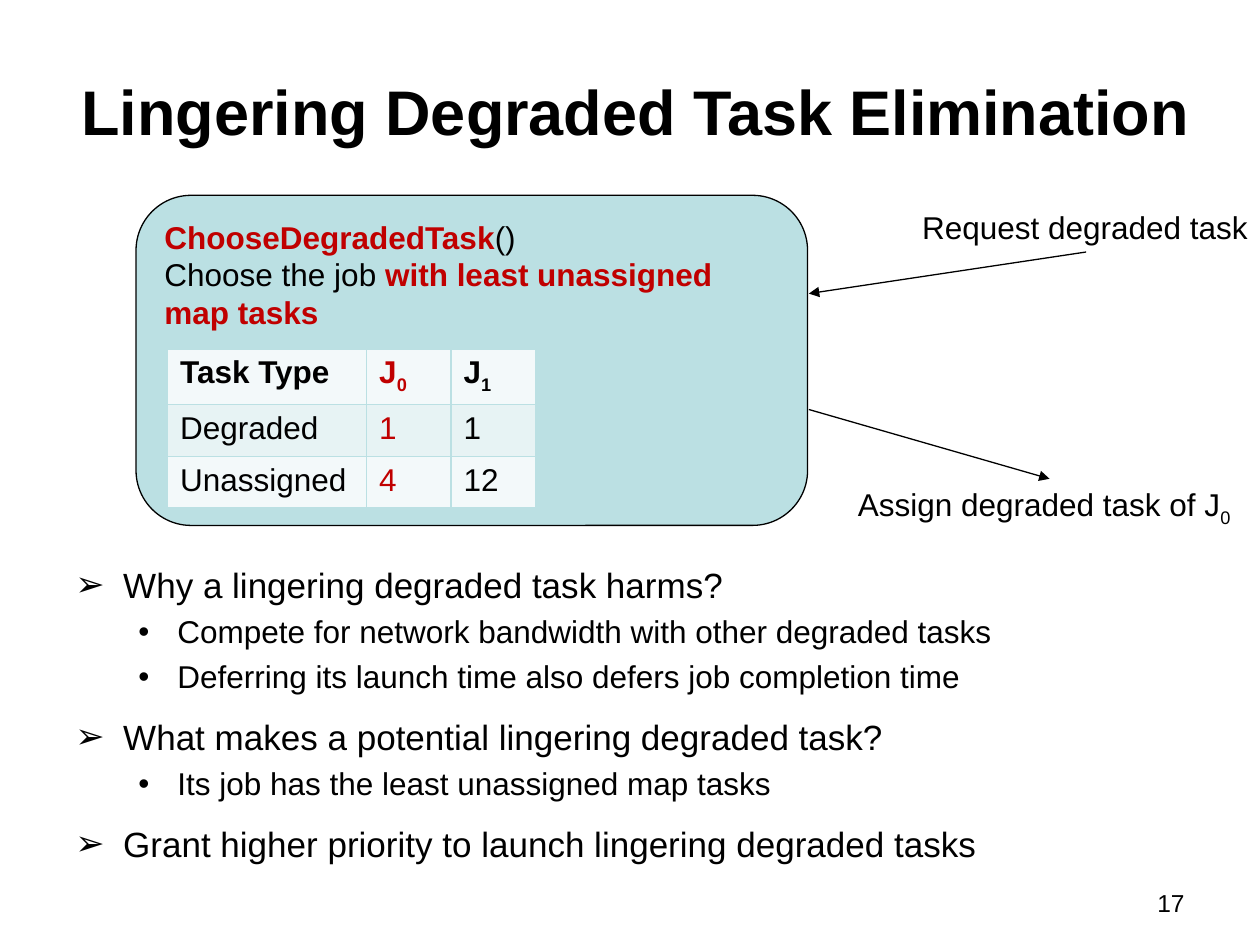
"""Build the slide on eliminating lingering degraded tasks."""
from lxml.etree import SubElement
from pptx import Presentation
from pptx.dml.color import RGBColor
from pptx.enum.shapes import MSO_CONNECTOR, MSO_SHAPE
from pptx.enum.text import MSO_ANCHOR as Anchor, PP_ALIGN as Align
from pptx.oxml.ns import qn
from pptx.util import Inches, Pt

FONT = "Arial"
BLACK = RGBColor(0x00, 0x00, 0x00)
RED = RGBColor(0xC0, 0x00, 0x00)
TEAL = RGBColor(0xBB, 0xE0, 0xE3)
ROW_FILLS = [RGBColor(0xF3, 0xF9, 0xFA), RGBColor(0xE7, 0xF3, 0xF4)]

# A run is (text, flags), with flags b = bold, r = red, s = subscript.
TITLE = [("Lingering Degraded Task Elimination", "b")]
PAGE_NUMBER = [("17", "")]
ALGORITHM = [
    [("ChooseDegradedTask", "rb"), ("()", "")],
    [("Choose the job ", ""), ("with least unassigned map tasks", "rb")],
]
TASKS = [
    [[("Task Type", "b")], [("J", "rb"), ("0", "rbs")], [("J", "b"), ("1", "bs")]],
    [[("Degraded", "")], [("1", "r")], [("1", "")]],
    [[("Unassigned", "")], [("4", "r")], [("12", "")]],
]
COLUMN_WIDTHS = [1.58, 0.67, 0.67]
ROW_HEIGHT = 0.41
LABELS = [
    ((7.22, 1.6, 2.81, 0.4), [("Request degraded task", "")]),
    ((6.71, 3.8, 3.25, 0.4), [("Assign degraded task of J", ""), ("0", "s")]),
]
ARROWS = [((8.62, 2), (6.42, 2.33)), ((6.42, 3.25), (8.33, 3.8))]
POINTS = [
    (0, "Why a lingering degraded task harms?"),
    (1, "Compete for network bandwidth with other degraded tasks"),
    (1, "Deferring its launch time also defers job completion time"),
    (0, "What makes a potential lingering degraded task?"),
    (1, "Its job has the least unassigned map tasks"),
    (0, "Grant higher priority to launch lingering degraded tasks"),
]
LEVELS = [
    {"bullet": "➢", "size": 20, "margin": 0.38, "hanging": 0.38, "before": 11.5},
    {"bullet": "•", "size": 18, "margin": 0.81, "hanging": 0.31, "before": 4.1},
]


def inches(values):
    return [Inches(value) for value in values]


def write(para, runs, size=18, align=Align.LEFT):
    para.alignment = align
    for text, flags in runs:
        span = para.add_run()
        span.text = text
        font = span.font
        font.name, font.size, font.bold = FONT, Pt(size), "b" in flags
        font.color.rgb = RED if "r" in flags else BLACK
        if "s" in flags:
            font._element.set("baseline", "-25000")


def fill_frame(frame, paragraphs, **style):
    for index, runs in enumerate(paragraphs):
        para = frame.add_paragraph() if index else frame.paragraphs[0]
        write(para, runs, **style)


def add_text(page, place, paragraphs, wrap=True, anchor=Anchor.TOP, **style):
    box = page.shapes.add_textbox(*inches(place))
    box.text_frame.word_wrap = wrap
    box.text_frame.vertical_anchor = anchor
    fill_frame(box.text_frame, paragraphs, **style)
    return box


def add_algorithm(page):
    box = page.shapes.add_shape(
        MSO_SHAPE.ROUNDED_RECTANGLE, *inches((1.08, 1.55, 5.33, 2.62)))
    box.shadow.inherit = False
    box.fill.solid()
    box.fill.fore_color.rgb = TEAL
    box.line.color.rgb, box.line.width = BLACK, Pt(0.75)
    box.text_frame.word_wrap = True
    box.text_frame.vertical_anchor = Anchor.TOP
    fill_frame(box.text_frame, ALGORITHM)


def add_borders(cell):
    properties = cell._tc.get_or_add_tcPr()
    for side in ("a:lnL", "a:lnR", "a:lnT", "a:lnB"):
        line = SubElement(properties, qn(side), w=str(Pt(1)))
        solid = SubElement(line, qn("a:solidFill"))
        SubElement(solid, qn("a:srgbClr"), val=str(TEAL))


def add_tasks(page):
    place = (1.33, 2.77, sum(COLUMN_WIDTHS), ROW_HEIGHT * len(TASKS))
    table = page.shapes.add_table(
        len(TASKS), len(COLUMN_WIDTHS), *inches(place)).table
    for column, width in zip(table.columns, COLUMN_WIDTHS):
        column.width = Inches(width)
    for row, values in enumerate(TASKS):
        for column, runs in enumerate(values):
            cell = table.cell(row, column)
            add_borders(cell)
            cell.fill.solid()
            cell.fill.fore_color.rgb = ROW_FILLS[row % 2]
            write(cell.text_frame.paragraphs[0], runs)


def add_arrow(page, start, end):
    arrow = page.shapes.add_connector(
        MSO_CONNECTOR.STRAIGHT, *inches(start + end))
    arrow.line.color.rgb, arrow.line.width = BLACK, Pt(0.75)
    SubElement(arrow.line._get_or_add_ln(), qn("a:tailEnd"), type="triangle")
    SubElement(arrow._element.spPr, qn("a:effectLst"))


def add_points(page):
    box = add_text(page, (0.5, 4.42, 9, 2.75), [])
    for index, (depth, text) in enumerate(POINTS):
        level = LEVELS[depth]
        frame = box.text_frame
        para = frame.add_paragraph() if index else frame.paragraphs[0]
        para.level = depth
        para.space_before = Pt(level["before"])
        write(para, [(text, "")], level["size"])
        properties = para._p.get_or_add_pPr()
        properties.set("marL", str(Inches(level["margin"])))
        properties.set("indent", str(-Inches(level["hanging"])))
        SubElement(properties, qn("a:buFont"), typeface=FONT)
        SubElement(properties, qn("a:buChar"), char=level["bullet"])


def main():
    deck = Presentation()
    deck.slide_width, deck.slide_height = inches((10, 7.5))
    page = deck.slides.add_slide(deck.slide_layouts[6])
    add_text(page, (0.42, 0.25, 9.25, 1.25), [TITLE],
             anchor=Anchor.MIDDLE, size=36, align=Align.CENTER)
    add_points(page)
    add_text(page, (7.17, 7, 2.33, 0.35), [PAGE_NUMBER],
             size=14, align=Align.RIGHT)
    add_algorithm(page)
    add_tasks(page)
    for start, end in ARROWS:
        add_arrow(page, start, end)
    for place, runs in LABELS:
        add_text(page, place, [runs], wrap=False)
    deck.save("out.pptx")


if __name__ == "__main__":
    main()
